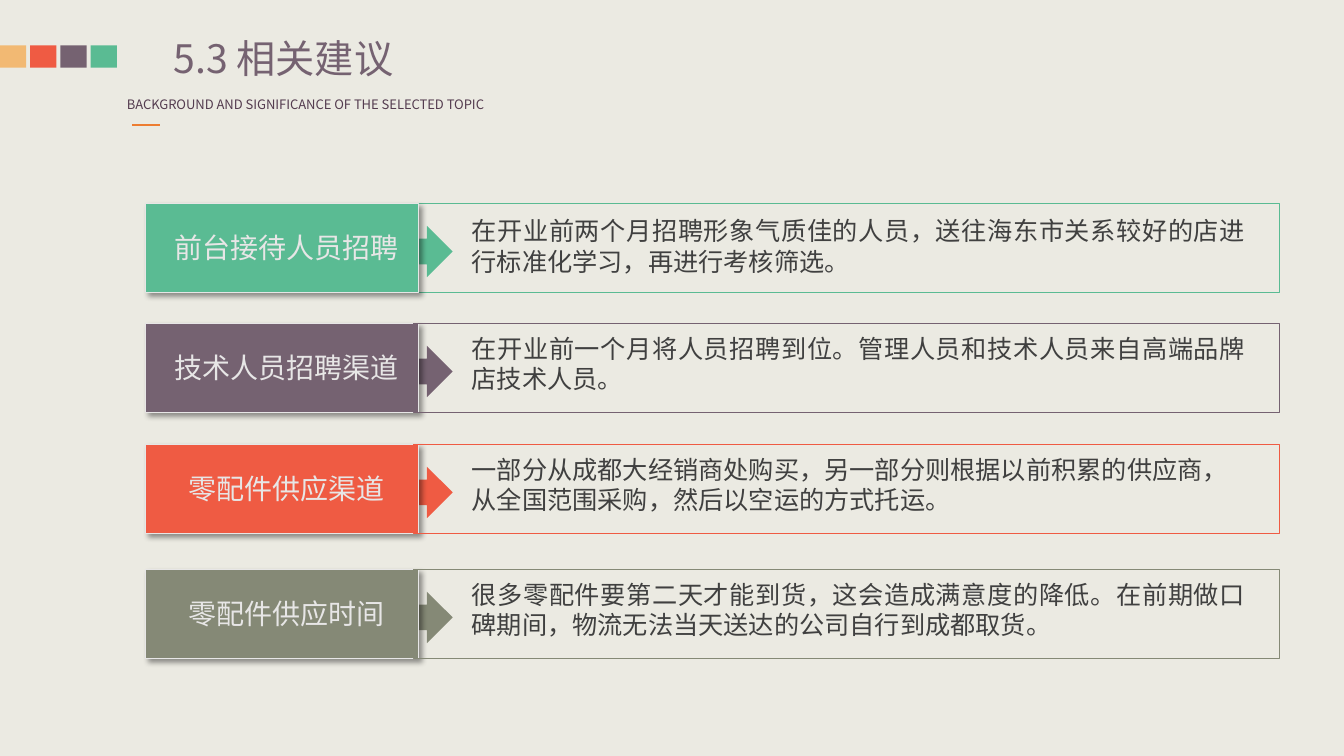
from lxml.etree import SubElement
from pptx import Presentation
from pptx.dml.color import RGBColor
from pptx.enum.shapes import MSO_CONNECTOR, MSO_SHAPE
from pptx.enum.text import MSO_AUTO_SIZE, PP_ALIGN
from pptx.oxml.ns import qn
from pptx.util import Inches, Pt

FONT = "Noto Sans CJK SC"
COLORS = {
    "background": "EBEAE2",
    "yellow": "F2B973",
    "red": "EF5B43",
    "purple": "756271",
    "green": "5ABB93",
    "olive": "858976",
    "orange": "ED7D31",
    "plum": "543C4F",
    "body": "404040",
    "light": "E7E6E6",
    "black": "000000",
}
SUGGESTIONS = [
    (2.02, 0.07, "green", PP_ALIGN.JUSTIFY, "前台接待人员招聘",
     "在开业前两个月招聘形象气质佳的人员，送往海东市关系较好的店进行标准化学习，再进行考核筛选。"),
    (3.21, 0.05, "purple", PP_ALIGN.JUSTIFY, "技术人员招聘渠道",
     "在开业前一个月将人员招聘到位。管理人员和技术人员来自高端品牌店技术人员。"),
    (4.41, 0.05, "red", PP_ALIGN.LEFT, "零配件供应渠道",
     "一部分从成都大经销商处购买，另一部分则根据以前积累的供应商，从全国范围采购，然后以空运的方式托运。"),
    (5.65, 0.05, "olive", PP_ALIGN.JUSTIFY, "零配件供应时间",
     "很多零配件要第二天才能到货，这会造成满意度的降低。在前期做口碑期间，物流无法当天送达的公司自行到成都取货。"),
]


def rgb(name):
    return RGBColor.from_string(COLORS[name])


def add_text(s, text, x, y, w, h, size, color, align=PP_ALIGN.LEFT, wrap=True, inset=None):
    tf = s.shapes.add_textbox(Inches(x), Inches(y), Inches(w), Inches(h)).text_frame
    tf.word_wrap = wrap
    tf.auto_size = MSO_AUTO_SIZE.SHAPE_TO_FIT_TEXT
    if inset is not None:
        tf.margin_left = tf.margin_top = tf.margin_right = tf.margin_bottom = Inches(inset)
    p = tf.paragraphs[0]
    p.alignment = align
    r = p.add_run()
    r.text = text
    r.font.name = FONT
    r.font.size = Pt(size)
    r.font.color.rgb = rgb(color)
    SubElement(r.font._element, qn("a:ea"), typeface=FONT)


def add_block(s, kind, x, y, w, h, fill=None, line=None):
    sp = s.shapes.add_shape(kind, Inches(x), Inches(y), Inches(w), Inches(h))
    sp.shadow.inherit = False
    if fill:
        sp.fill.solid()
        sp.fill.fore_color.rgb = rgb(fill)
    else:
        sp.fill.background()
    if line:
        sp.line.color.rgb = rgb(line)
        sp.line.width = Pt(0.75)
    else:
        sp.line.fill.background()
    return sp


def add_shadow(sp):
    effects = sp._element.spPr.find(qn("a:effectLst"))
    shadow = SubElement(effects, qn("a:outerShdw"), blurRad=str(Pt(4)), dist=str(Pt(3)),
                        dir=str(45 * 60000), algn="tl", rotWithShape="0")
    color = SubElement(shadow, qn("a:srgbClr"), val=COLORS["black"])
    SubElement(color, qn("a:alpha"), val="40000")


def add_rule(s, x1, x2, y, color):
    line = s.shapes.add_connector(MSO_CONNECTOR.STRAIGHT, Inches(x1), Inches(y), Inches(x2), Inches(y))
    line.line.color.rgb = rgb(color)
    line.line.width = Pt(1.5)
    SubElement(line._element.spPr, qn("a:effectLst"))


def add_label(s, y, color, label):
    add_block(s, MSO_SHAPE.RIGHT_ARROW, 3.86, y + 0.22, 0.63, 0.51, fill=color)
    add_shadow(add_block(s, MSO_SHAPE.RECTANGLE, 1.44, y, 2.71, 0.88, fill=color, line="light"))
    add_text(s, label, 1.55, y + 0.22, 2.58, 0.44, size=20, color="light", align=PP_ALIGN.CENTER)


def add_detail(s, y, offset, color, align, detail, fill=None):
    add_block(s, MSO_SHAPE.RECTANGLE, 4.1, y, 8.59, 0.88, fill=fill, line=color)
    add_text(s, detail, 4.58, y + offset, 7.87, 0.71, size=18, color="body", align=align)


def add_header(s):
    for i, color in enumerate(["yellow", "red", "purple", "green"]):
        add_block(s, MSO_SHAPE.RECTANGLE, 0.3 * i, 0.45, 0.26, 0.22, fill=color)
    add_text(s, "5.3 相关建议", 1.72, 0.34, 3.99, 0.47, size=28, color="purple", inset=0)
    add_text(s, "BACKGROUND AND SIGNIFICANCE OF THE SELECTED TOPIC", 1.16, 0.91, 4.07, 0.26,
             size=9.3, color="plum", wrap=False)
    add_rule(s, 1.31, 1.59, 1.24, "orange")


def main():
    prs = Presentation()
    prs.slide_width = Inches(13.33)
    prs.slide_height = Inches(7.5)
    s = prs.slides.add_slide(prs.slide_layouts[6])
    s.background.fill.solid()
    s.background.fill.fore_color.rgb = rgb("background")
    add_header(s)
    for i, (y, offset, color, align, label, detail) in enumerate(SUGGESTIONS):
        if i == 0:
            add_detail(s, y, offset, color, align, detail, fill="background")
            add_label(s, y, color, label)
        else:
            add_label(s, y, color, label)
            add_detail(s, y, offset, color, align, detail)
    prs.save("out.pptx")


if __name__ == "__main__":
    main()
